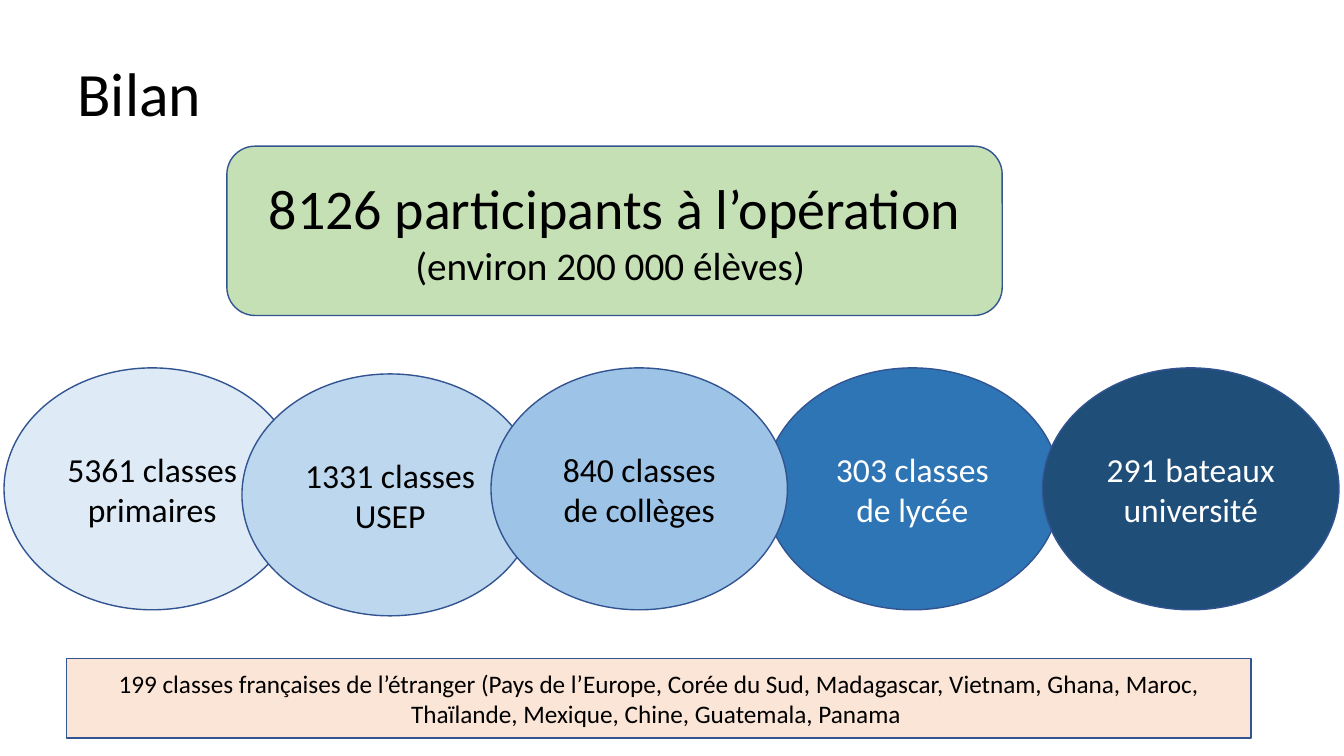
import pptx
import pptx.util
import pptx.dml.color
import pptx.enum.shapes
import pptx.enum.text

Inches = pptx.util.Inches
Pt = pptx.util.Pt
KIND = pptx.enum.shapes.MSO_SHAPE
ALIGN = pptx.enum.text.PP_ALIGN
MIDDLE = pptx.enum.text.MSO_ANCHOR.MIDDLE


def color(code):
    return pptx.dml.color.RGBColor.from_string(code)


def fill_text(shape, lines, ink, align):
    frame = shape.text_frame
    frame.word_wrap = True
    frame.vertical_anchor = MIDDLE
    for i, (text, size) in enumerate(lines):
        para = frame.paragraphs[0] if i == 0 else frame.add_paragraph()
        para.text = text
        para.alignment = align
        para.font.name = "Calibri"
        para.font.size = Pt(size)
        para.font.color.rgb = color(ink)


deck = pptx.Presentation()
deck.slide_width = Inches(13.33)
deck.slide_height = Inches(7.5)
slide = deck.slides.add_slide(deck.slide_layouts[6])

title = slide.shapes.add_textbox(Inches(0.67), Inches(0.6), Inches(12), Inches(0.71))
fill_text(title, [("Bilan", 44)], "000000", ALIGN.LEFT)
title.text_frame.paragraphs[0].line_spacing = 0.9

total = [("8126 participants à l’opération", 40), ("(environ 200 000 élèves) ", 28)]
abroad = [(
    "199 classes françaises de l’étranger (Pays de l’Europe, Corée du Sud, "
    "Madagascar, Vietnam, Ghana, Maroc, Thaïlande, Mexique, Chine, Guatemala, Panama ", 18)]
panels = [
    (KIND.ROUNDED_RECTANGLE, 2.25, 1.45, 7.69, 1.68, "C5E0B4", "000000", total),
    (KIND.RECTANGLE, 0.66, 6.53, 11.75, 0.79, "FBE5D6", "000000", abroad),
]

groups = [
    (0.04, 3.65, "DEEBF7", "000000", "5361 classes primaires"),
    (7.58, 3.65, "2E75B6", "FFFFFF", "303 classes de lycée"),
    (10.34, 3.65, "1F4E79", "FFFFFF", "291 bateaux université"),
    (2.4, 3.71, "BDD7EE", "000000", "1331 classes USEP"),
    (4.87, 3.65, "9DC3E6", "000000", "840 classes de collèges"),
]
for left, top, fill, ink, text in groups:
    panels.append((KIND.OVAL, left, top, 2.94, 2.4, fill, ink, [(text, 24)]))

for kind, left, top, width, height, fill, ink, lines in panels:
    shape = slide.shapes.add_shape(
        kind, Inches(left), Inches(top), Inches(width), Inches(height))
    shape.shadow.inherit = False
    shape.fill.solid()
    shape.fill.fore_color.rgb = color(fill)
    shape.line.color.rgb = color("325491")
    shape.line.width = Pt(1)
    fill_text(shape, lines, ink, ALIGN.CENTER)

deck.save("out.pptx")
